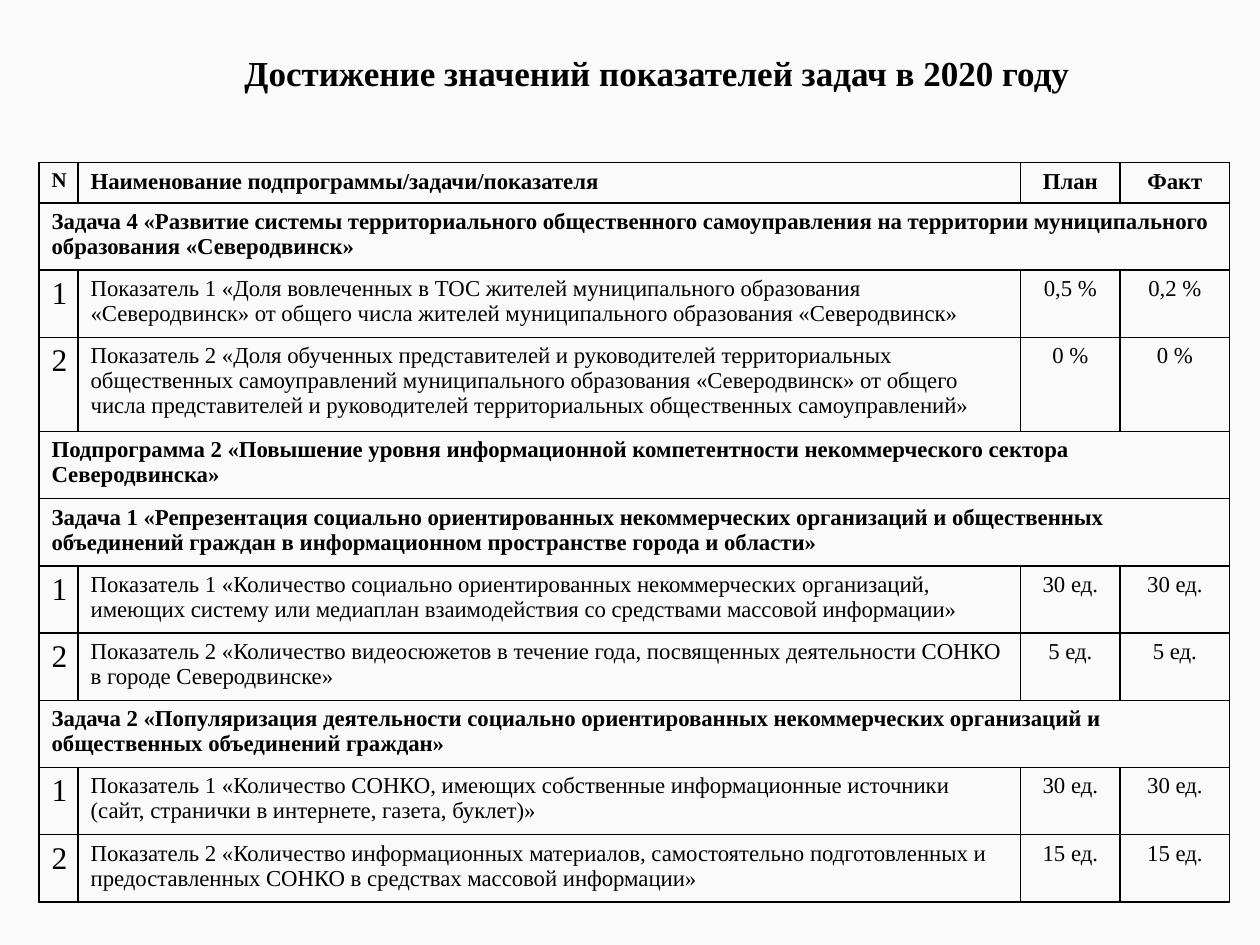
"""Build the slide with planned and actual indicator values for 2020."""
from dataclasses import dataclass

from lxml.etree import SubElement
from pptx import Presentation
from pptx.dml.color import RGBColor
from pptx.enum.text import MSO_ANCHOR, PP_ALIGN
from pptx.oxml.ns import qn
from pptx.util import Inches, Pt

TITLE = "Достижение значений показателей задач в 2020 году"
HEADER = ("N", "Наименование подпрограммы/задачи/показателя", "План", "Факт")
ROWS = [
    (1, HEADER),
    (2, ("Задача 4 «Развитие системы территориального общественного самоуправления на территории "
         "муниципального образования «Северодвинск»",)),
    (2, ("1", "Показатель 1 «Доля вовлеченных в ТОС жителей муниципального образования «Северодвинск» "
         "от общего числа жителей муниципального образования «Северодвинск»", "0,5 %", "0,2 %")),
    (3, ("2", "Показатель 2 «Доля обученных представителей и руководителей территориальных общественных "
         "самоуправлений муниципального образования «Северодвинск» от общего числа представителей и "
         "руководителей территориальных общественных самоуправлений»", "0 %", "0 %")),
    (2, ("Подпрограмма 2 «Повышение уровня информационной компетентности некоммерческого сектора "
         "Северодвинска»",)),
    (2, ("Задача 1 «Репрезентация социально ориентированных некоммерческих организаций и общественных "
         "объединений граждан в информационном пространстве города и области»",)),
    (2, ("1", "Показатель 1 «Количество социально ориентированных некоммерческих организаций, имеющих "
         "систему или медиаплан взаимодействия со средствами массовой информации»", "30 ед.", "30 ед.")),
    (2, ("2", "Показатель 2 «Количество видеосюжетов в течение года, посвященных деятельности СОНКО "
         "в городе Северодвинске»", "5 ед.", "5 ед.")),
    (2, ("Задача 2 «Популяризация деятельности социально ориентированных некоммерческих организаций "
         "и общественных объединений граждан»",)),
    (2, ("1", "Показатель 1 «Количество СОНКО, имеющих собственные информационные источники\n"
         "(сайт, странички в интернете, газета, буклет)»", "30 ед.", "30 ед.")),
    (2, ("2", "Показатель 2 «Количество информационных материалов, самостоятельно подготовленных и "
         "предоставленных СОНКО в средствах массовой информации»", "15 ед.", "15 ед.")),
]
COLUMNS = (0.31, 7.48, 0.79, 0.87)
TABLE_LEFT, TABLE_TOP, TABLE_HEIGHT = 0.31, 1.29, 5.87
PADDING, LINE = 0.1, 0.2


@dataclass(frozen=True)
class Theme:
    font: str = "Times New Roman"
    ink: str = "000000"
    paper: str = "FAFAFA"
    title: int = 20
    body: int = 13
    number: int = 18
    number_header: int = 12
    border: float = 0.96


THEME = Theme()


def style_text(text_frame, size, bold, align):
    for paragraph in text_frame.paragraphs:
        paragraph.alignment = align
        font = paragraph.font
        font.name, font.size, font.bold = THEME.font, Pt(size), bold
        font.color.rgb = RGBColor.from_string(THEME.ink)


def frame_cell(cell):
    properties = cell._tc.get_or_add_tcPr()
    for side in ("lnL", "lnR", "lnT", "lnB"):
        line = SubElement(properties, qn(f"a:{side}"), w=str(Pt(THEME.border)))
        fill = SubElement(line, qn("a:solidFill"))
        SubElement(fill, qn("a:srgbClr"), val=THEME.ink)
    cell.fill.background()


def fill_row(table, index, texts):
    is_header, is_section = texts == HEADER, len(texts) == 1
    cells = [table.cell(index, column) for column in range(len(COLUMNS))]
    for cell in cells:
        frame_cell(cell)
    if is_section:
        cells[0].merge(cells[-1])
    for column, (cell, text) in enumerate(zip(cells, texts)):
        cell.text = text
        size = THEME.body
        if column == 0 and not is_section:
            size = THEME.number_header if is_header else THEME.number
        if column == 2 and not is_header:
            cell.margin_left = cell.margin_right = Inches(0.01)
        align = PP_ALIGN.CENTER if column >= 2 else PP_ALIGN.LEFT
        style_text(cell.text_frame, size, is_header or is_section, align)


def add_indicator_table(slide):
    frame = slide.shapes.add_table(
        len(ROWS), len(COLUMNS), Inches(TABLE_LEFT), Inches(TABLE_TOP),
        Inches(sum(COLUMNS)), Inches(TABLE_HEIGHT))
    table = frame.table
    table.first_row = table.horz_banding = False
    for column, width in zip(table.columns, COLUMNS):
        column.width = Inches(width)
    natural = [PADDING + LINE * lines for lines, _ in ROWS]
    for index, (height, (_, texts)) in enumerate(zip(natural, ROWS)):
        table.rows[index].height = Inches(TABLE_HEIGHT * height / sum(natural))
        fill_row(table, index, texts)


def add_title(slide):
    title = slide.shapes.title
    title.left, title.top, title.width, title.height = map(Inches, (1.61, 0.36, 7.21, 0.44))
    title.text_frame.text = TITLE
    title.text_frame.vertical_anchor = MSO_ANCHOR.TOP
    style_text(title.text_frame, THEME.title, True, PP_ALIGN.CENTER)


def main():
    presentation = Presentation()
    presentation.slide_width, presentation.slide_height = Inches(10), Inches(7.5)
    slide = presentation.slides.add_slide(presentation.slide_layouts[5])
    background = slide.background.fill
    background.solid()
    background.fore_color.rgb = RGBColor.from_string(THEME.paper)
    add_title(slide)
    add_indicator_table(slide)
    presentation.save("out.pptx")


if __name__ == "__main__":
    main()
